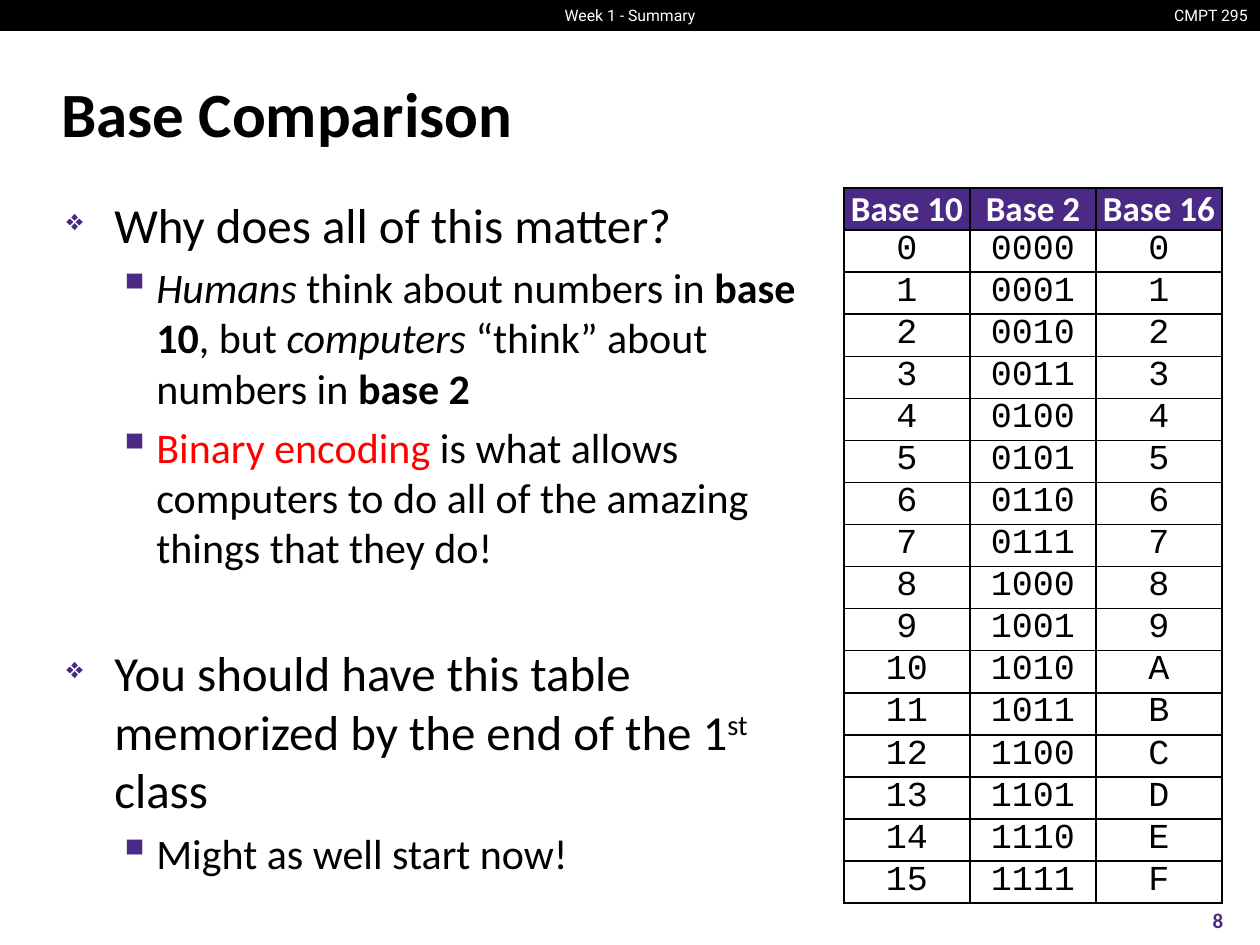
from lxml.etree import SubElement
from pptx import Presentation
from pptx.dml.color import RGBColor
from pptx.enum.shapes import MSO_SHAPE as Shape
from pptx.enum.text import MSO_ANCHOR as Anchor, PP_ALIGN as Align
from pptx.oxml.ns import qn
from pptx.util import Emu, Pt

PX_PER_INCH = 126
BLACK = RGBColor(0x00, 0x00, 0x00)
WHITE = RGBColor(0xFF, 0xFF, 0xFF)
PURPLE = RGBColor(0x4B, 0x2A, 0x85)
RED = RGBColor(0xFF, 0x00, 0x00)

BULLETS = {
    0: dict(char="❖", percent=60, indent=48, hanging=48, size=28, before=5.6),
    1: dict(char="▪", percent=110, indent=90, hanging=39, size=24, before=4.8),
}
SECTION_GAP = 40
BODY = [
    (0, False, [("Why does all of this matter?", "")]),
    (1, False, [
        ("Humans", "italic"), (" think about numbers in ", ""),
        ("base 10", "bold"), (", but ", ""), ("computers", "italic"),
        (" “think” about numbers in ", ""), ("base 2", "bold"),
    ]),
    (1, False, [
        ("Binary encoding ", "red"),
        ("is what allows computers to do all of the amazing things that they do!", ""),
    ]),
    (0, True, [
        ("You should have this table memorized by the end of the 1", ""),
        ("st", "superscript"), (" class", ""),
    ]),
    (1, False, [("Might as well start now!", "")]),
]


def px(length):
    return Emu(round(length * 914400 / PX_PER_INCH))


def box_emu(box):
    return [px(length) for length in box]


def style_font(font, name, size, color, bold=False):
    font.name = name
    font.size = Pt(size)
    font.color.rgb = color
    font.bold = bold


def add_label(slide, box, text, name, size, color, align, bold=False, anchor=Anchor.TOP, wrap=True):
    frame = slide.shapes.add_textbox(*box_emu(box)).text_frame
    frame.word_wrap = wrap
    frame.vertical_anchor = anchor
    paragraph = frame.paragraphs[0]
    paragraph.text = text
    paragraph.alignment = align
    style_font(paragraph.font, name, size, color, bold)


def add_header_bar(slide, box):
    left, top, width, height = box
    bar = slide.shapes.add_shape(Shape.RECTANGLE, *box_emu(box))
    bar.shadow.inherit = False
    bar.fill.solid()
    bar.fill.fore_color.rgb = BLACK
    bar.line.fill.background()
    course_width, week_width = 102, 178
    course = (left + width - course_width, top, course_width, height)
    week = (left + (width - week_width) // 2, top, week_width, height)
    add_label(slide, course, "CMPT 295", "Roboto", 9, WHITE, Align.RIGHT, wrap=False)
    add_label(slide, week, "Week 1 - Summary", "Roboto", 9, WHITE, Align.CENTER, wrap=False)


def set_bullet(paragraph, char, percent, indent, hanging):
    properties = paragraph._p.get_or_add_pPr()
    properties.set("marL", str(px(indent)))
    properties.set("indent", str(-px(hanging)))
    color = SubElement(properties, qn("a:buClr"))
    SubElement(color, qn("a:srgbClr"), val=str(PURPLE))
    SubElement(properties, qn("a:buSzPct"), val=str(percent * 1000))
    SubElement(properties, qn("a:buChar"), char=char)


def add_body(slide, box):
    frame = slide.shapes.add_textbox(*box_emu(box)).text_frame
    frame.word_wrap = True
    for index, (level, new_section, runs) in enumerate(BODY):
        paragraph = frame.add_paragraph() if index else frame.paragraphs[0]
        bullet = BULLETS[level]
        paragraph.level = level
        paragraph.space_before = Pt(SECTION_GAP if new_section else bullet["before"])
        set_bullet(paragraph, bullet["char"], bullet["percent"], bullet["indent"], bullet["hanging"])
        paragraph.font.name = "Calibri"
        paragraph.font.size = Pt(bullet["size"])
        for text, style in runs:
            run = paragraph.add_run()
            run.text = text
            run.font.bold = style == "bold"
            run.font.italic = style == "italic"
            run.font.color.rgb = RED if style == "red" else BLACK
            if style == "superscript":
                run._r.get_or_add_rPr().set("baseline", "30000")


def set_borders(cell):
    properties = cell._tc.get_or_add_tcPr()
    for side in ("lnL", "lnR", "lnT", "lnB"):
        line = SubElement(properties, qn(f"a:{side}"), w=str(Pt(1)))
        fill = SubElement(line, qn("a:solidFill"))
        SubElement(fill, qn("a:srgbClr"), val=str(BLACK))


def fill_cell(cell, text, is_header):
    cell.margin_left = cell.margin_right = px(6)
    cell.margin_top = cell.margin_bottom = 0
    set_borders(cell)
    paragraph = cell.text_frame.paragraphs[0]
    paragraph.text = text
    paragraph.alignment = Align.CENTER
    if is_header:
        cell.fill.solid()
        cell.fill.fore_color.rgb = PURPLE
        style_font(paragraph.font, "Calibri", 20, WHITE, True)
    else:
        cell.fill.background()
        style_font(paragraph.font, "Courier New", 20, BLACK)


def add_base_table(slide, box):
    rows = [("Base 10", "Base 2", "Base 16")]
    rows += [(str(value), f"{value:04b}", f"{value:X}") for value in range(16)]
    table = slide.shapes.add_table(len(rows), 3, *box_emu(box)).table
    table.first_row = table.horz_banding = False
    for row_index, texts in enumerate(rows):
        table.rows[row_index].height = px(39 if row_index else 42)
        for column_index, text in enumerate(texts):
            fill_cell(table.cell(row_index, column_index), text, row_index == 0)


def main():
    presentation = Presentation()
    presentation.slide_width = px(1260)
    presentation.slide_height = px(945)
    slide = presentation.slides.add_slide(presentation.slide_layouts[6])
    add_header_bar(slide, (0, 0, 1260, 31))
    add_label(slide, (49, 60, 1158, 105), "Base Comparison", "Calibri", 36, BLACK,
              Align.LEFT, bold=True, anchor=Anchor.MIDDLE)
    add_body(slide, (54, 188, 781, 685))
    add_label(slide, (1176, 895, 84, 50), "8", "Calibri", 12, PURPLE,
              Align.CENTER, bold=True, anchor=Anchor.MIDDLE)
    add_base_table(slide, (844, 188, 378, 678))
    presentation.save("out.pptx")


if __name__ == "__main__":
    main()
